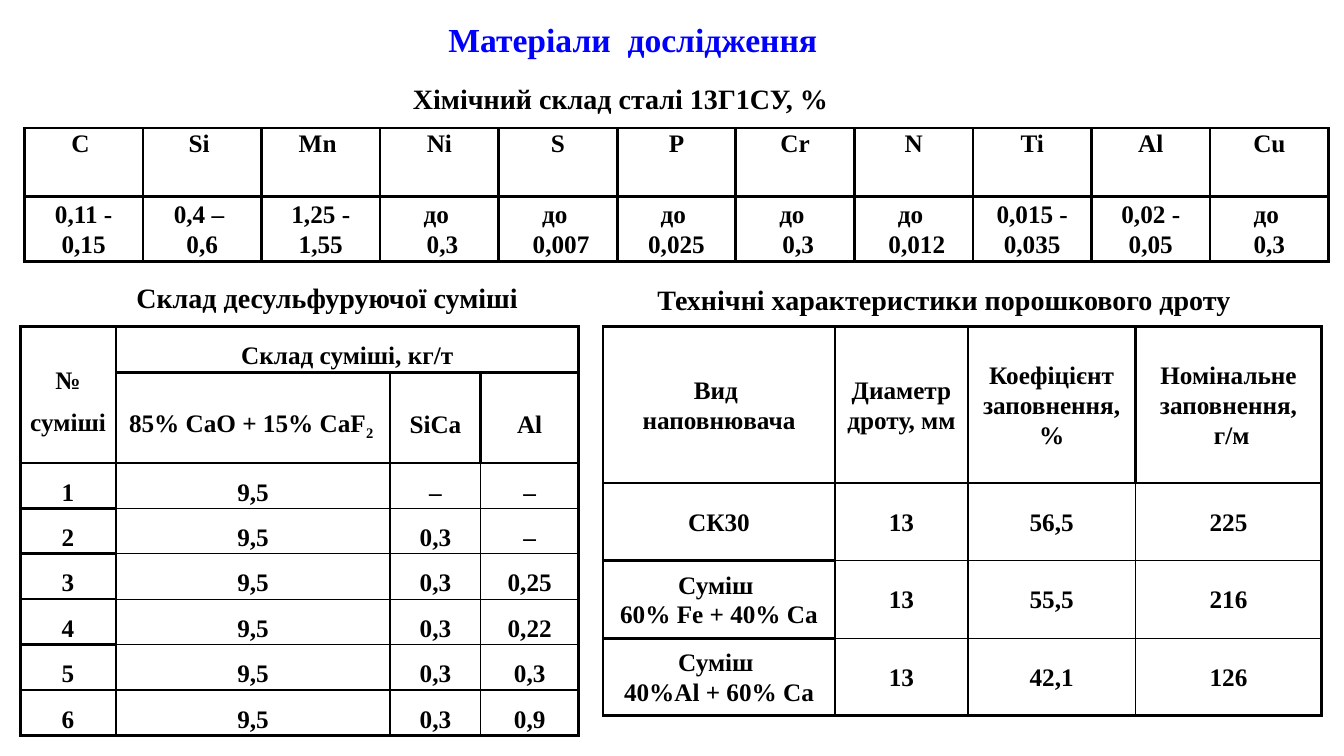
from dataclasses import dataclass

from pptx import Presentation
from pptx.dml.color import RGBColor as Rgb
from pptx.enum.text import MSO_ANCHOR as Anchor, MSO_AUTO_SIZE as AutoSize, PP_ALIGN as Align
from pptx.oxml import parse_xml
from pptx.oxml.ns import nsdecls
from pptx.util import Inches, Pt


@dataclass(frozen=True)
class Theme:
    font: str = "Times New Roman"
    ink: str = "000000"
    accent: str = "0000FF"
    title_size: int = 24
    caption_size: int = 20
    cell_size: int = 18
    thick: float = 2.25
    thin: float = 1
    columns: int = 160
    rows: int = 90


def apply(target, formats):
    for name, value in formats.items():
        setattr(target, name, value)


class MaterialsSlide:
    def __init__(self, deck, theme):
        self.theme = theme
        self.column = deck.slide_width / theme.columns
        self.row = deck.slide_height / theme.rows
        self.slide = deck.slides.add_slide(deck.slide_layouts[6])

    def place(self, left, top, width, height):
        return (round(left * self.column), round(top * self.row),
                round(width * self.column), round(height * self.row))

    def fill_text(self, frame, text, size, color, align, spacing=None):
        for index, line in enumerate(text.split("\n")):
            paragraph = frame.add_paragraph() if index else frame.paragraphs[0]
            apply(paragraph, {"alignment": align, "line_spacing": spacing})
            for part, piece in enumerate(line.split("_")):
                run = paragraph.add_run()
                run.text = piece
                apply(run.font, {"name": self.theme.font, "size": Pt(size), "bold": True})
                run.font.color.rgb = Rgb.from_string(color)
                if part % 2:
                    run._r.get_or_add_rPr().set("baseline", "-25000")

    def heading(self, text, area, size, color, align=Align.LEFT, anchor=Anchor.TOP, indent=0):
        frame = self.slide.shapes.add_textbox(*self.place(*area)).text_frame
        apply(frame, {"word_wrap": True, "auto_size": AutoSize.SHAPE_TO_FIT_TEXT,
                      "vertical_anchor": anchor})
        self.fill_text(frame, text, size, color, align)
        if indent:
            properties = frame.paragraphs[0]._p.get_or_add_pPr()
            properties.set("marL", "0")
            properties.set("indent", str(Inches(indent)))

    def caption(self, text, area, align):
        self.heading(text, area, self.theme.caption_size, self.theme.ink,
                     align, Anchor.MIDDLE, 0.49)

    def title(self, text, area):
        self.heading(text, area, self.theme.title_size, self.theme.accent)

    def border(self, cell, side, weight):
        cell._tc.get_or_add_tcPr().append(parse_xml(
            f'<a:ln{side} {nsdecls("a")} w="{Pt(weight)}" cap="flat" cmpd="sng">'
            f'<a:solidFill><a:srgbClr val="{self.theme.ink}"/></a:solidFill>'
            f'<a:prstDash val="solid"/></a:ln{side}>'))

    def table(self, corner, widths, heights, values, heads, spacing,
              margin=0.07, top_anchor=Anchor.MIDDLE, merges=()):
        area = self.place(*corner, sum(widths), sum(heights))
        table = self.slide.shapes.add_table(len(heights), len(widths), *area).table
        apply(table, {"first_row": False, "horz_banding": False})
        for column, width in zip(table.columns, widths):
            column.width = round(width * self.column)
        for row, height in zip(table.rows, heights):
            row.height = round(height * self.row)
        for first, last in merges:
            table.cell(*first).merge(table.cell(*last))
        last_row, last_column = len(heights) - 1, len(widths) - 1
        for r, line in enumerate(values):
            for c, text in enumerate(line):
                cell = table.cell(r, c)
                framed = r < heads or c == 0
                edges = {"L": c == 1, "R": c == last_column,
                         "T": r == heads, "B": r == last_row}
                for side, outer in edges.items():
                    heavy = framed or outer
                    self.border(cell, side, self.theme.thick if heavy else self.theme.thin)
                cell.fill.background()
                apply(cell, {"margin_left": Inches(margin), "margin_right": Inches(margin),
                             "margin_top": 0, "margin_bottom": 0,
                             "vertical_anchor": Anchor.MIDDLE if r else top_anchor})
                if text:
                    self.fill_text(cell.text_frame, text, self.theme.cell_size,
                                   self.theme.ink, Align.CENTER, spacing)


STEEL = {
    "C ": "0,11 - 0,15", "Si ": "0,4 – \n0,6", "Mn ": "1,25 - 1,55",
    "Ni": "до \n 0,3", "S": "до \n 0,007", "P": "до \n0,025",
    "Cr": "до \n 0,3", "N": "до \n 0,012", "Ti": "0,015 - 0,035",
    "Al": "0,02 - 0,05", "Cu": "до \n0,3",
}
ADDITIONS = [("‒", "‒"), ("0,3", "‒"), ("0,3", "0,25"),
             ("0,3", "0,22"), ("0,3", "0,3"), ("0,3", "0,9")]
MIXTURES = [
    ("№ суміші", "Склад суміші, кг/т", "", ""),
    ("", "85% CaO + 15% CaF_2 ", "SiCa", "Al"),
    *((str(number), "9,5", *added) for number, added in enumerate(ADDITIONS, 1)),
]
WIRES = [
    ("Вид \nнаповнювача", "Диаметр дроту, мм", "Коефіцієнт заповнення, %",
     "Номінальне заповнення,\n г/м"),
    ("СК30", "13", "56,5", "225"),
    ("Суміш \n60% Fe + 40% Ca", "13", "55,5", "216"),
    ("Суміш \n40%Al + 60% Ca", "13", "42,1", "126"),
]


def main():
    deck = Presentation()
    apply(deck, {"slide_width": Inches(13.33), "slide_height": Inches(7.5)})
    page = MaterialsSlide(deck, Theme())
    page.title("Матеріали  дослідження", (52.2, 1.7, 48.5, 6))
    page.table((2.9, 15.25), [14.12] * len(STEEL), [8.16, 7.68],
               [list(STEEL), list(STEEL.values())], heads=2, spacing=1.07,
               top_anchor=Anchor.TOP)
    page.caption("Хімічний склад сталі 13Г1СУ, %", (42.1, 9.1, 77.5, 5.2), Align.JUSTIFY)
    page.table((2.4, 38.9), [11.4, 32.64, 10.8, 11.64], [5.4, 10.8] + [5.4] * len(ADDITIONS),
               MIXTURES, heads=2, spacing=1.5,
               merges=[((0, 0), (1, 0)), ((0, 1), (0, 3))])
    page.caption("Склад десульфуруючої суміші", (2.5, 32.8, 67, 5.2), Align.CENTER)
    page.caption("Технічні характеристики порошкового дроту", (71.2, 33, 77.9, 5.2),
                 Align.JUSTIFY)
    page.table((71.8, 38.9), [27.6, 15.84, 19.92, 22.2], [18.6] + [9.24] * 3,
               WIRES, heads=1, spacing=1.07, margin=0)
    deck.save("out.pptx")


if __name__ == "__main__":
    main()
